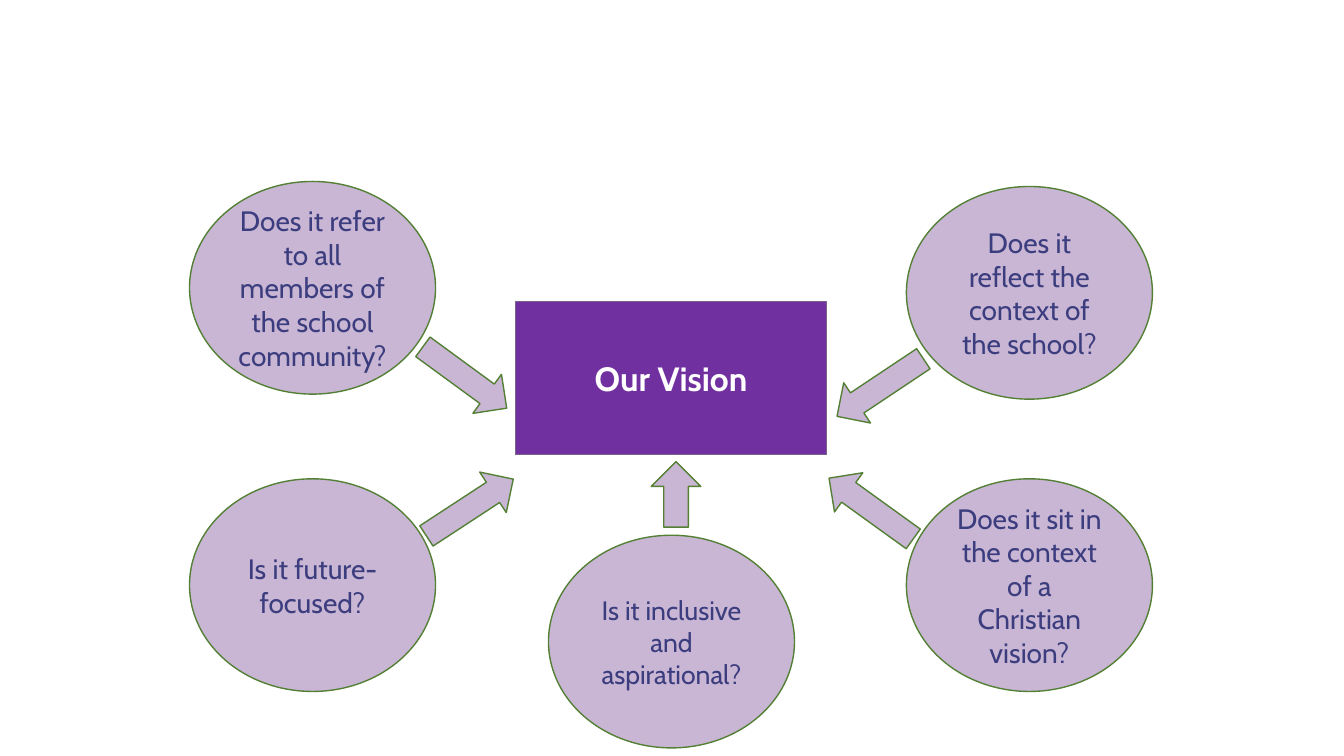
from pptx import Presentation, util as u
from pptx.dml.color import RGBColor
from pptx.enum import shapes, text

PX = 9144  # EMU in one px, 100 px to the inch

WHITE = RGBColor(0xFF, 0xFF, 0xFF)
PURPLE = RGBColor(0x70, 0x30, 0xA0)
PURPLE_EDGE = RGBColor(0x7A, 0x63, 0x88)
LILAC = RGBColor(0xC9, 0xB6, 0xD4)
GREEN = RGBColor(0x53, 0x80, 0x35)
NAVY = RGBColor(0x3B, 0x3D, 0x7E)


class VisionSlide:
    """Holds the style and the current slide."""

    font_name = "Cabin"
    bubble_size = (244, 211)

    def __init__(self, deck):
        self.page = deck.slides.add_slide(deck.slide_layouts[6])

    def shape(self, kind, left, top, width, height, fill=LILAC, edge=GREEN):
        box = self.page.shapes.add_shape(
            kind, *(u.Emu(n * PX) for n in (left, top, width, height)))
        box.shadow.inherit = False
        box.fill.solid()
        box.fill.fore_color.rgb = fill
        box.line.color.rgb = edge
        box.line.width = u.Pt(1)
        return box

    def label(self, box, words, size, color, bold=False):
        frame = box.text_frame
        frame.word_wrap = True
        frame.vertical_anchor = text.MSO_ANCHOR.MIDDLE
        para = frame.paragraphs[0]
        para.alignment = text.PP_ALIGN.CENTER
        span = para.add_run()
        span.text = words
        span.font.color.rgb = color
        style = {"name": self.font_name, "size": u.Pt(size), "bold": bold}
        for key, value in style.items():
            setattr(span.font, key, value)

    def centre(self, words, left, top, width, height):
        box = self.shape(shapes.MSO_SHAPE.RECTANGLE, left, top, width, height,
                         PURPLE, PURPLE_EDGE)
        self.label(box, words, 24, WHITE, bold=True)

    def bubble(self, words, left, top, size=20):
        box = self.shape(shapes.MSO_SHAPE.OVAL, left, top, *self.bubble_size)
        self.label(box, words, size, NAVY)

    def arrow(self, left, top, angle, width=48, height=103):
        box = self.shape(shapes.MSO_SHAPE.DOWN_ARROW, left, top, width, height)
        box.rotation = angle


def main():
    deck = Presentation()
    deck.slide_width, deck.slide_height = u.Emu(1333 * PX), u.Emu(750 * PX)
    slide = VisionSlide(deck)

    # Central vision
    slide.centre("Our Vision", 511, 299, 309, 152)

    # Questions around it
    left, middle, right = 188, 544, 899
    lower = 475
    slide.bubble("Does it refer to all members of the school community?", left, 180)
    slide.bubble("Is it future-focused?", left, lower)
    slide.bubble("Is it inclusive and aspirational?", middle, 531, size=19)
    slide.bubble("Does it sit in the context of a Christian vision?", right, lower)
    slide.bubble("Does it reflect the context of the school?", right, 185)

    # Arrows pointing at the vision
    for x, y, angle in ((437, 323, 306.2), (442, 452, 236.8),
                        (849, 333, 56.3), (840, 453, 125.8)):
        slide.arrow(x, y, angle)
    slide.arrow(646, 458, 180, width=49, height=65)

    deck.save("out.pptx")


if __name__ == "__main__":
    main()
